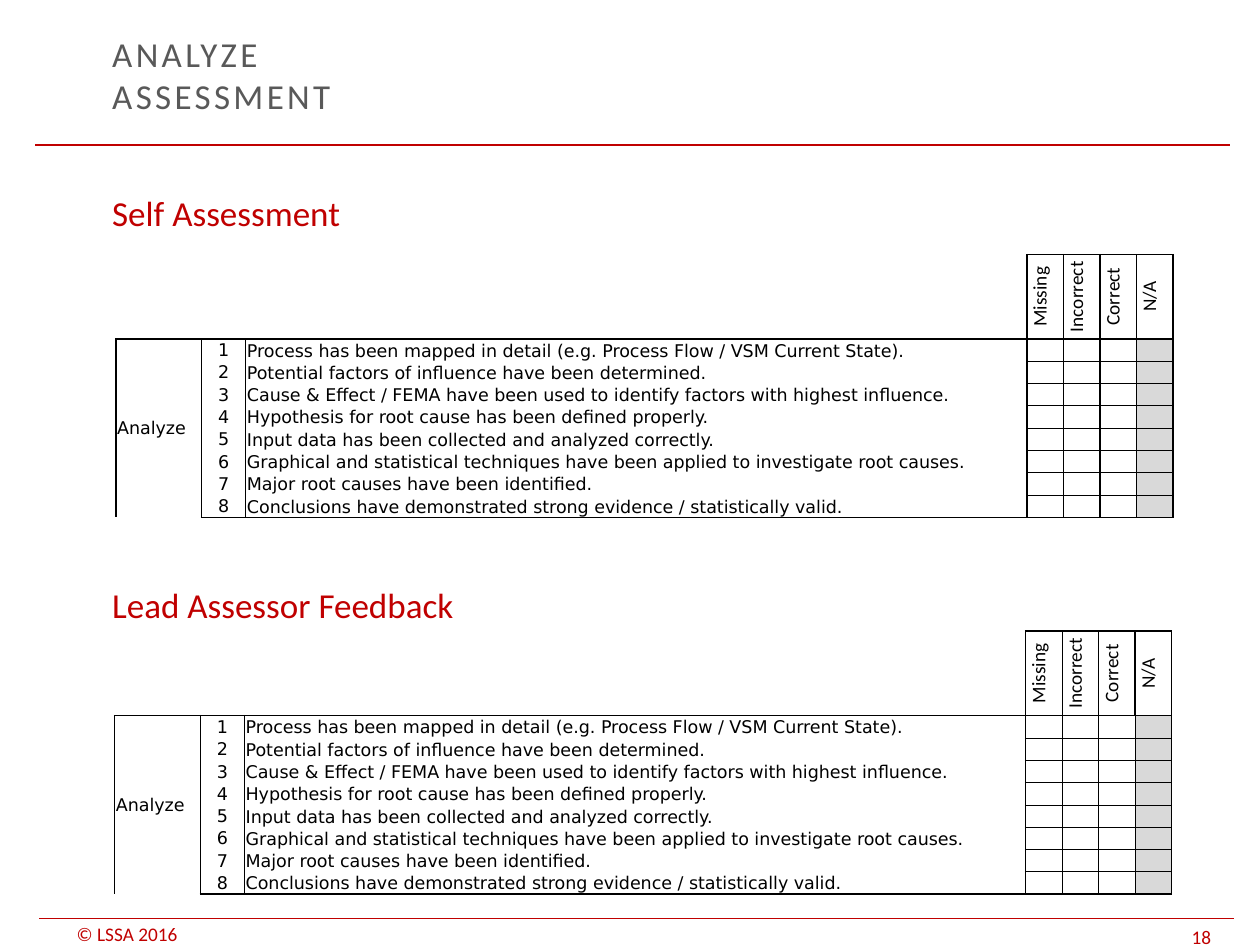
from lxml.etree import SubElement
from pptx import Presentation
from pptx.dml.color import RGBColor
from pptx.enum.text import MSO_ANCHOR as Anchor, MSO_AUTO_SIZE as Fit, PP_ALIGN as Align
from pptx.oxml.ns import qn
from pptx.util import Inches, Pt

RED, GREY, BLACK, SHADE = "C00000", "595959", "000000", "D9D9D9"
MARKS = ["Missing", "Incorrect", "Correct", "N/A"]
CHECKS = [
    "Process has been mapped in detail (e.g. Process Flow / VSM Current State).",
    "Potential factors of influence have been determined.",
    "Cause & Effect / FEMA have been used to identify factors with highest influence.",
    "Hypothesis for root cause has been defined properly.",
    "Input data has been collected and analyzed correctly.",
    "Graphical and statistical techniques have been applied to investigate root causes.",
    "Major root causes have been identified.",
    "Conclusions have demonstrated strong evidence / statistically valid.",
]
WIDTHS = [0.68, 0.35, 6.2] + [0.29] * len(MARKS)
HEAD, HIGH = 0.67, 2.09
ROWS, COLS = len(CHECKS) + 1, len(WIDTHS)
FIRST = COLS - len(MARKS)


def style(para, size, color, face="Calibri"):
    for run in para.runs:
        run.font.size = Pt(size)
        run.font.name = face
        run.font.color.rgb = RGBColor.from_string(color)


def border(cell, side, width):
    """Draw one cell edge; a width of 0 hides it."""
    edge = SubElement(cell._tc.get_or_add_tcPr(), qn("a:ln" + side), w=str(Pt(width)))
    if width:
        fill = SubElement(edge, qn("a:solidFill"))
        SubElement(fill, qn("a:srgbClr"), val=BLACK)
    else:
        SubElement(edge, qn("a:noFill"))


prs = Presentation()
prs.slide_width, prs.slide_height = Inches(10), Inches(7.5)
slide = prs.slides.add_slide(prs.slide_layouts[1])
shapes = slide.shapes

# Footer texts and red rules
for text, x, y, w, h in [("© LSSA 2016", 0.51, 7.32, 1.42, 0.18), ("18", 9.36, 7.31, 0.64, 0.22)]:
    frame = shapes.add_textbox(Inches(x), Inches(y), Inches(w), Inches(h)).text_frame
    frame.word_wrap = True
    frame.vertical_anchor = Anchor.BOTTOM
    frame.margin_top = frame.margin_bottom = 0
    frame.text = text
    style(frame.paragraphs[0], 11, RED)

for x, y in [(0.28, 1.15), (0.31, 7.29)]:
    rule = shapes.add_connector(1, Inches(x), Inches(y), Inches(x + 9.48), Inches(y))
    rule.line.color.rgb = RGBColor.from_string(RED)
    rule.line.width = Pt(0.75)
    SubElement(rule._element.spPr, qn("a:effectLst"))

# Title and section headings
title = shapes.title
title.left, title.top, title.width, title.height = map(Inches, (0.79, 0.26, 7.09, 0.66))
frame = title.text_frame
frame.auto_size = Fit.NONE
frame.vertical_anchor = Anchor.MIDDLE
frame.text = "ANALYZE\vASSESSMENT"
para = frame.paragraphs[0]
para.alignment = Align.LEFT
style(para, 20, GREY)
for run in para.runs:
    run.font._element.set("spc", "190")

body = slide.placeholders[1]
body.left, body.top, body.width, body.height = map(Inches, (0.79, 1.47, 8.66, 5.51))
frame = body.text_frame
frame.auto_size = Fit.NONE
frame.text = "Self Assessment\nLead Assessor Feedback"
for para, gap in zip(frame.paragraphs, (0, 200)):
    props = para._p.get_or_add_pPr()
    props.set("marL", str(Inches(0.38)))
    props.set("indent", str(Inches(-0.38)))
    SubElement(props, qn("a:buNone"))
    para.space_before = Pt(gap)
    style(para, 20, RED)

# Cell texts, and edge widths by grid line
texts = {(0, FIRST + i): mark for i, mark in enumerate(MARKS)}
texts[1, 0] = "Analyze"
for r, check in enumerate(CHECKS, 1):
    texts[r, 1], texts[r, 2] = str(r), check

upright = [[0, 0, 0, 1, 0.5, 1, 1, 1]] + [[1, 1, 1, 1, 0.5, 1, 0.5, 1]] * len(CHECKS)
level = [[0] * FIRST + [1] * len(MARKS), [1] * COLS]
level += [[0] * FIRST + [0.5] * len(MARKS)] * (len(CHECKS) - 1) + [[1] * COLS]

for x, y in [(0.92, 2.02), (0.91, 5.01)]:
    grid = shapes.add_table(ROWS, COLS, Inches(x), Inches(y), Inches(sum(WIDTHS)), Inches(HIGH)).table
    grid.first_row = grid.horz_banding = False
    for col, width in zip(grid.columns, WIDTHS):
        col.width = Inches(width)
    for r, row in enumerate(grid.rows):
        row.height = Inches((HIGH - HEAD) / len(CHECKS) if r else HEAD)
        for c, cell in enumerate(row.cells):
            cell.margin_left = cell.margin_right = cell.margin_top = Inches(0.01)
            cell.margin_bottom = 0
            cell.vertical_anchor = Anchor.MIDDLE if r and c < 2 else Anchor.BOTTOM
            border(cell, "L", upright[r][c])
            border(cell, "R", upright[r][c + 1])
            border(cell, "T", level[r][c])
            border(cell, "B", level[r + 1][c])
            if r and c == COLS - 1:
                cell.fill.solid()
                cell.fill.fore_color.rgb = RGBColor.from_string(SHADE)
            else:
                cell.fill.background()
            para = cell.text_frame.paragraphs[0]
            if (r, c) not in texts:
                SubElement(para._p, qn("a:endParaRPr"), sz="1000")
                continue
            para.text = texts[r, c]
            if r:
                style(para, 10, BLACK, "DejaVu Sans")
            else:
                cell._tc.tcPr.set("vert", "vert270")
                style(para, 11, BLACK)
            if r == 0 or c == 1:
                para.alignment = Align.CENTER
    grid.cell(1, 0).merge(grid.cell(ROWS - 1, 0))

prs.save("out.pptx")
